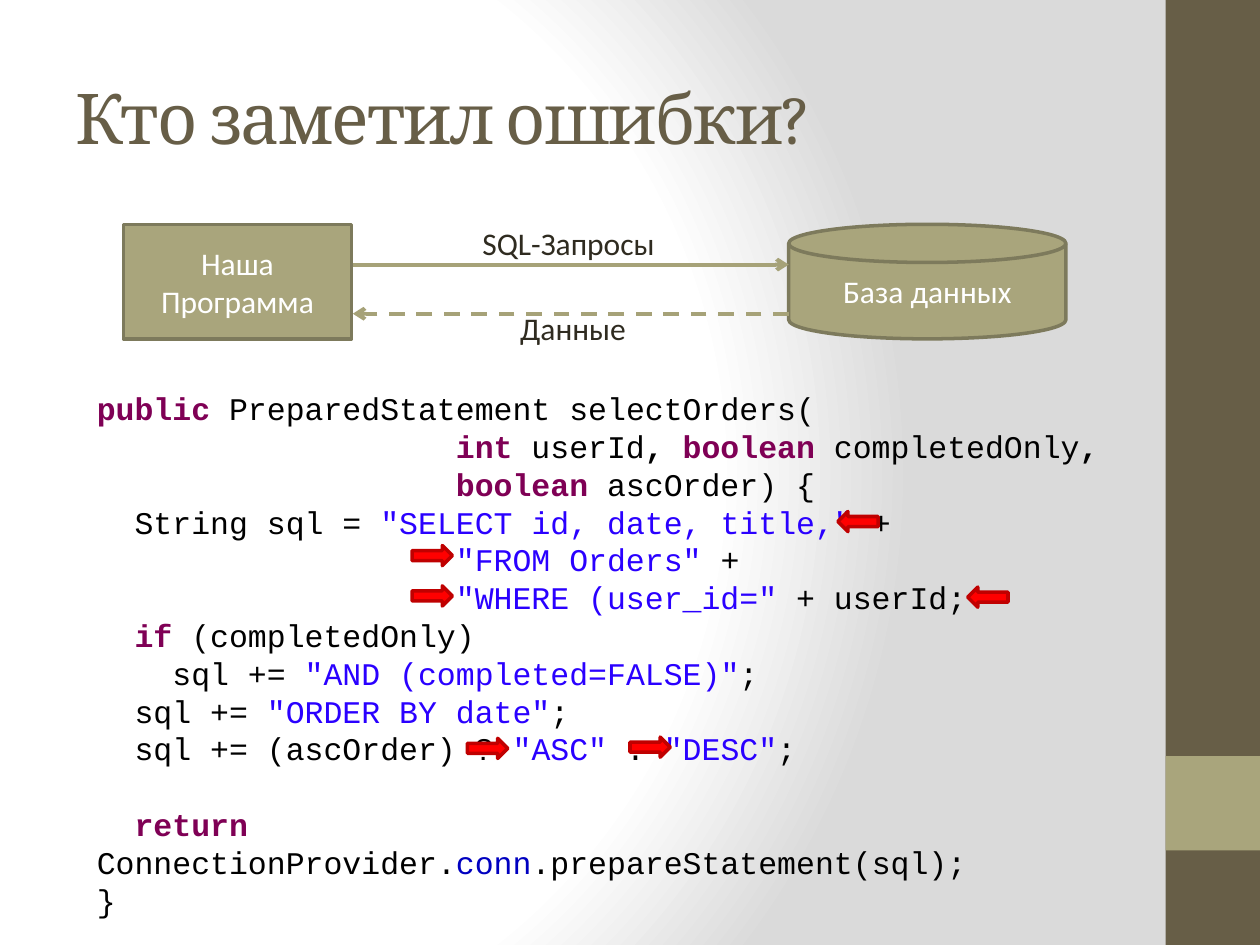
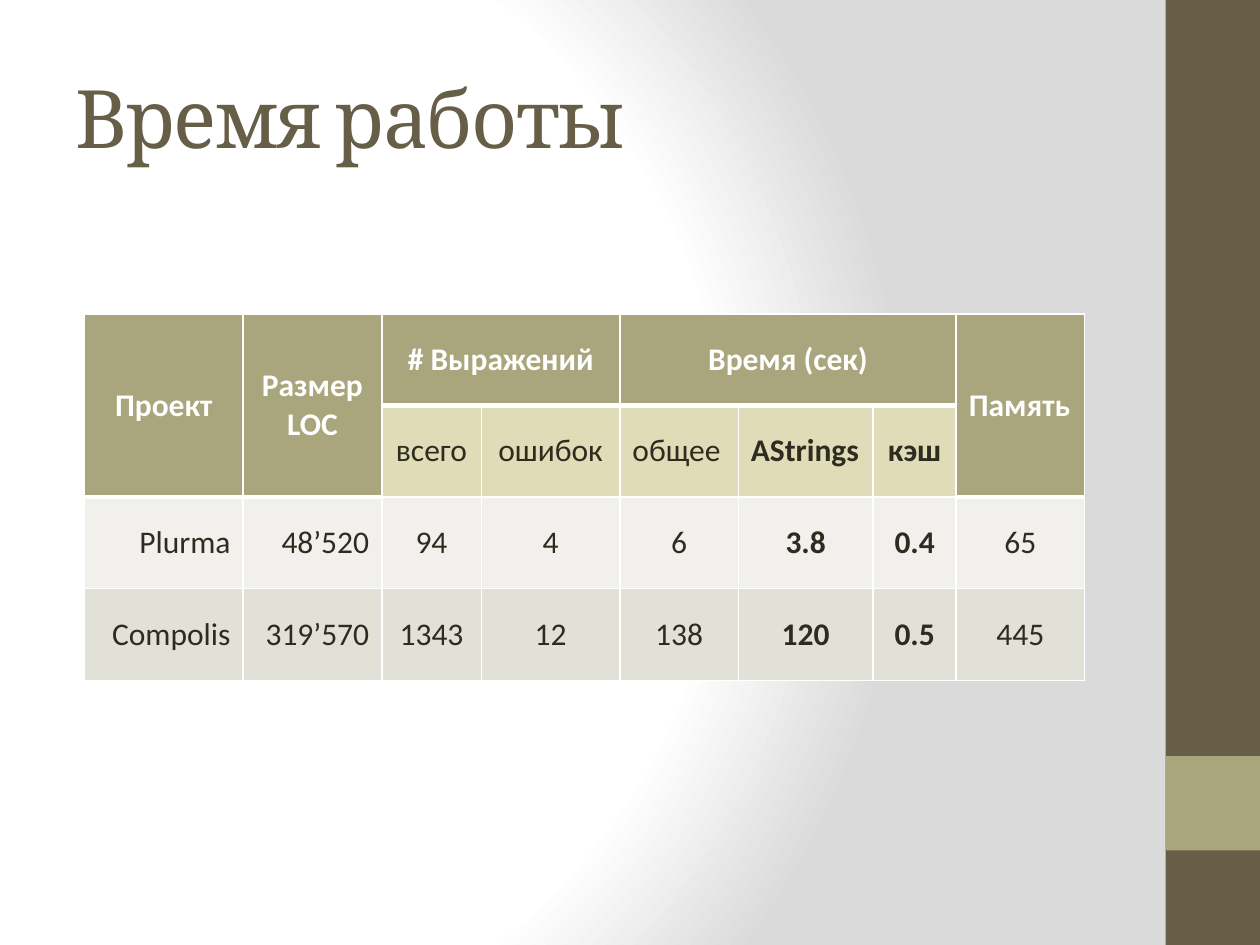
from dataclasses import dataclass, field
from typing import NamedTuple

from lxml.etree import SubElement
from pptx import Presentation
from pptx.dml.color import RGBColor
from pptx.enum.dml import MSO_LINE_DASH_STYLE as Dash
from pptx.enum.shapes import MSO_CONNECTOR as Link, MSO_SHAPE as Preset
from pptx.enum.text import MSO_ANCHOR as Anchor, MSO_AUTO_SIZE as AutoSize, PP_ALIGN as Align
from pptx.oxml import parse_xml
from pptx.oxml.ns import nsdecls, qn
from pptx.util import Inches, Pt


def rgb(code: str) -> RGBColor:
    return RGBColor.from_string(code)


@dataclass(frozen=True)
class Theme:
    brown: str = "675E47"
    olive: str = "A9A57C"
    olive_edge: str = "7D7A5C"
    link: str = "A6A278"
    ink: str = "2F2B20"
    white: str = "FFFFFF"
    shade: str = "DADADA"
    red: str = "FF0000"
    red_edge: str = "C00000"
    subhead: str = "DFDCB7"
    body_rows: tuple = ("F1F0EC", "E2E1D7")
    title_font: str = "Cambria"
    body_font: str = "Calibri"
    code_font: str = "Courier New"
    body_size: float = 18
    code_pitch: float = 21.6
    code_styles: dict = field(default_factory=lambda: {
        "plain": {"color": "000000", "bold": False},
        "mark": {"color": "000000", "bold": True},
        "keyword": {"color": "7F0055", "bold": True},
        "string": {"color": "2A00FF", "bold": False},
        "field": {"color": "0000C0", "bold": False},
    })


THEME = Theme()


class Area(NamedTuple):
    left: float
    top: float
    width: float
    height: float

    def lengths(self) -> list:
        return [Inches(value) for value in self]


class Node(NamedTuple):
    text: str
    preset: Preset
    area: Area


class Flow(NamedTuple):
    label: str
    label_area: Area
    start: float
    end: float
    level: float
    dash: Dash | None


class Pointer(NamedTuple):
    left: float
    top: float
    preset: Preset = Preset.RIGHT_ARROW


class CodeLine(NamedTuple):
    indent: int  # in characters
    spans: list
    gap_before: bool = False


# Shared parts
BANDS = [(Area(9.25, 0, 0.75, 7.5), THEME.brown), (Area(9.25, 6, 0.75, 0.75), THEME.olive)]
TITLE_AREA = Area(0.5, 0.3, 8.33, 1.25)

# Slide 1: diagram, code and error pointers
NODES = [
    Node("Наша\nПрограмма", Preset.RECTANGLE, Area(0.98, 1.78, 1.81, 0.91)),
    Node("База данных", Preset.FLOWCHART_MAGNETIC_DISK, Area(6.26, 1.78, 2.2, 0.91)),
]
FLOWS = [
    Flow("SQL-Запросы", Area(3.73, 1.73, 1.59, 0.4), 2.8, 6.26, 2.1, None),
    Flow("Данные", Area(4.03, 2.4, 1.05, 0.4), 6.26, 2.8, 2.49, Dash.DASH),
]
POINTER_SIZE = (0.32, 0.16)
POINTERS = [
    Pointer(3.27, 4.33), Pointer(3.27, 4.65), Pointer(7.68, 4.66, Preset.LEFT_ARROW),
    Pointer(3.71, 5.86), Pointer(5, 5.85), Pointer(6.65, 4.06, Preset.LEFT_ARROW),
]
CODE_AREA = Area(0.67, 3.04, 8.43, 4.04)
CHARACTER = 0.15  # width of one code character
CODE = [
    CodeLine(0, [("public ", "keyword"), ("PreparedStatement selectOrders(", "plain")]),
    CodeLine(19, [("int ", "keyword"), ("userId", "plain"), (", ", "mark"),
                  ("boolean ", "keyword"), ("completedOnly", "plain"), (",", "mark")]),
    CodeLine(19, [("boolean ", "keyword"), ("ascOrder) {", "plain")]),
    CodeLine(2, [("String sql = ", "plain"), ('"SELECT id, date, title," ', "string"),
                 ("+", "plain")]),
    CodeLine(19, [('"FROM Orders"', "string"), (" +", "plain")]),
    CodeLine(19, [('"WHERE (user_id="', "string"), (" + userId;", "plain")]),
    CodeLine(2, [("if ", "keyword"), ("(completedOnly)", "plain")]),
    CodeLine(4, [("sql += ", "plain"), ('"AND (completed=FALSE)"', "string"), (";", "plain")]),
    CodeLine(2, [("sql += ", "plain"), ('"ORDER BY date"', "string"), (";", "plain")]),
    CodeLine(2, [("sql += (ascOrder) ? ", "plain"), ('"ASC"', "string"), (" : ", "plain"),
                 ('"DESC"', "string"), (";", "plain")]),
    CodeLine(2, [("return ", "keyword"), ("ConnectionProvider.", "plain"), ("conn", "field"),
                 (".prepareStatement(sql);", "plain")], gap_before=True),
    CodeLine(0, [("}", "plain")]),
]

# Slide 2: table of running times
TABLE_AREA = Area(0.67, 2.49, 7.95, 2.91)
COLUMN_WIDTHS = [1.26, 1.1, 0.79, 1.1, 0.94, 1.07, 0.66, 1.02]
ROWS = [
    ["Проект", "Размер\nLOC", "# Выражений", "", "Время (сек)", "", "", "Память"],
    ["", "", "всего", "ошибок", "общее", "AStrings", "кэш", ""],
    ["Plurma", "48’520", "94", "4", "6", "3.8", "0.4", "65"],
    ["Compolis", "319’570", "1343", "12", "138", "120", "0.5", "445"],
]
MERGES = [((0, 0), (1, 0)), ((0, 1), (1, 1)), ((0, 2), (0, 3)), ((0, 4), (0, 6)), ((0, 7), (1, 7))]
TALL_COLUMNS = {0, 1, 7}
RIGHT_COLUMNS = {0, 1}
BOLD_COLUMNS = {5, 6}
LEFT_CELLS = {(0, 7), (1, 4), (1, 5)}


def style_font(font, color: str, **values) -> None:
    font.color.rgb = rgb(color)
    for name, value in values.items():
        setattr(font, name, value)


def body_format(color: str, bold: bool = False) -> dict:
    return {"color": color, "bold": bold, "name": THEME.body_font, "size": Pt(THEME.body_size)}


def set_text(frame, text: str, align: Align, values: dict) -> None:
    frame.text = text
    for para in frame.paragraphs:
        para.alignment = align
        for span in para.runs:
            style_font(span.font, **values)


def add_block(page, preset: Preset, area: Area, fill: str, edge: str | None = None):
    block = page.shapes.add_shape(preset, *area.lengths())
    block.shadow.inherit = False
    block.fill.solid()
    block.fill.fore_color.rgb = rgb(fill)
    if edge:
        block.line.color.rgb = rgb(edge)
        block.line.width = Pt(2)
    else:
        block.line.fill.background()
    return block


def set_background(deck) -> None:
    master = deck.slide_master
    master.background.fill.solid()
    solid = master.element.find(".//" + qn("p:bgPr")).find(qn("a:solidFill"))
    stops = "".join(
        f'<a:gs pos="{place * 1000}"><a:srgbClr val="{color}"/></a:gs>'
        for place, color in ((0, THEME.white), (75, THEME.white), (100, THEME.shade)))
    solid.getparent().replace(solid, parse_xml(
        f'<a:gradFill {nsdecls("a")} rotWithShape="1"><a:gsLst>{stops}</a:gsLst>'
        '<a:path path="circle"><a:fillToRect l="20000" t="50000" r="100000" b="50000"/>'
        '</a:path></a:gradFill>'))


def add_page(deck, heading: str, size: float):
    page = deck.slides.add_slide(deck.slide_layouts[5])
    for area, color in BANDS:
        add_block(page, Preset.RECTANGLE, area, color)
    title = page.shapes.title
    title.left, title.top, title.width, title.height = TITLE_AREA.lengths()
    frame = title.text_frame
    frame.auto_size = AutoSize.NONE
    frame.vertical_anchor = Anchor.MIDDLE
    set_text(frame, heading, Align.LEFT,
             {"color": THEME.brown, "name": THEME.title_font, "size": Pt(size)})
    frame.paragraphs[0].runs[0].font._element.set("spc", "-100")
    return page


def add_node(page, node: Node) -> None:
    box = add_block(page, node.preset, node.area, THEME.olive, THEME.olive_edge)
    box.text_frame.vertical_anchor = Anchor.MIDDLE
    set_text(box.text_frame, node.text, Align.CENTER, body_format(THEME.white))


def add_flow(page, flow: Flow) -> None:
    level = Inches(flow.level)
    line = page.shapes.add_connector(
        Link.STRAIGHT, Inches(flow.start), level, Inches(flow.end), level)
    line.line.color.rgb = rgb(THEME.link)
    line.line.width = Pt(2.25)
    if flow.dash:
        line.line.dash_style = flow.dash
    SubElement(line.line._get_or_add_ln(), qn("a:tailEnd"), type="arrow")
    SubElement(line._element.spPr, qn("a:effectLst"))
    label = page.shapes.add_textbox(*flow.label_area.lengths())
    label.text_frame.word_wrap = False
    set_text(label.text_frame, flow.label, Align.LEFT, body_format(THEME.ink))


def add_code(page, area: Area, lines: list[CodeLine]) -> None:
    frame = page.shapes.add_textbox(*area.lengths()).text_frame
    frame.word_wrap = True
    for index, line in enumerate(lines):
        para = frame.add_paragraph() if index else frame.paragraphs[0]
        para.line_spacing = Pt(THEME.code_pitch)
        para.space_before = Pt(THEME.code_pitch if line.gap_before else 0)
        # Only the first line is indented, so wrapped code returns to the margin
        layout = para._p.get_or_add_pPr()
        layout.set("marL", "0")
        layout.set("indent", str(Inches(line.indent * CHARACTER)))
        for text, style in line.spans:
            span = para.add_run()
            span.text = text
            style_font(span.font, name=THEME.code_font, size=Pt(THEME.body_size),
                       **THEME.code_styles[style])


def is_header(row: int, column: int) -> bool:
    return row == 0 or (row == 1 and column in TALL_COLUMNS)


def thick_below(row: int, column: int) -> bool:
    return row == (1 if column in TALL_COLUMNS else 0)


def set_borders(cell, row: int, column: int) -> None:
    widths = {"lnL": 1, "lnR": 1,
              "lnT": 3 if thick_below(row - 1, column) else 1,
              "lnB": 3 if thick_below(row, column) else 1}
    for index, (side, width) in enumerate(widths.items()):
        cell._tc.get_or_add_tcPr().insert(index, parse_xml(
            f'<a:{side} {nsdecls("a")} w="{Pt(width)}"><a:solidFill>'
            f'<a:srgbClr val="{THEME.white}"/></a:solidFill></a:{side}>'))


def fill_cell(cell, row: int, column: int) -> None:
    header = is_header(row, column)
    if header:
        fill = THEME.olive
    else:
        fill = THEME.subhead if row == 1 else THEME.body_rows[row - 2]
    cell.fill.solid()
    cell.fill.fore_color.rgb = rgb(fill)
    cell.vertical_anchor = Anchor.MIDDLE
    align = Align.CENTER
    if (row, column) in LEFT_CELLS:
        align = Align.LEFT
    elif row > 1 and column in RIGHT_COLUMNS:
        align = Align.RIGHT
    set_text(cell.text_frame, ROWS[row][column], align,
             body_format(THEME.white if header else THEME.ink, header or column in BOLD_COLUMNS))
    set_borders(cell, row, column)


def add_times_table(page) -> None:
    table = page.shapes.add_table(len(ROWS), len(COLUMN_WIDTHS), *TABLE_AREA.lengths()).table
    table.first_row = table.horz_banding = False
    for column, width in zip(table.columns, COLUMN_WIDTHS):
        column.width = Inches(width)
    for row in range(len(ROWS)):
        for column in range(len(COLUMN_WIDTHS)):
            fill_cell(table.cell(row, column), row, column)
    for first, last in MERGES:
        table.cell(*first).merge(table.cell(*last))


def main() -> None:
    deck = Presentation()
    deck.slide_width, deck.slide_height = Inches(10), Inches(7.5)
    set_background(deck)

    errors_page = add_page(deck, "Кто заметил ошибки?", 40)
    add_code(errors_page, CODE_AREA, CODE)
    for node in NODES:
        add_node(errors_page, node)
    for flow in FLOWS:
        add_flow(errors_page, flow)
    for pointer in POINTERS:
        area = Area(pointer.left, pointer.top, *POINTER_SIZE)
        add_block(errors_page, pointer.preset, area, THEME.red, THEME.red_edge)

    add_times_table(add_page(deck, "Время работы", 46))
    deck.save("out.pptx")


if __name__ == "__main__":
    main()
